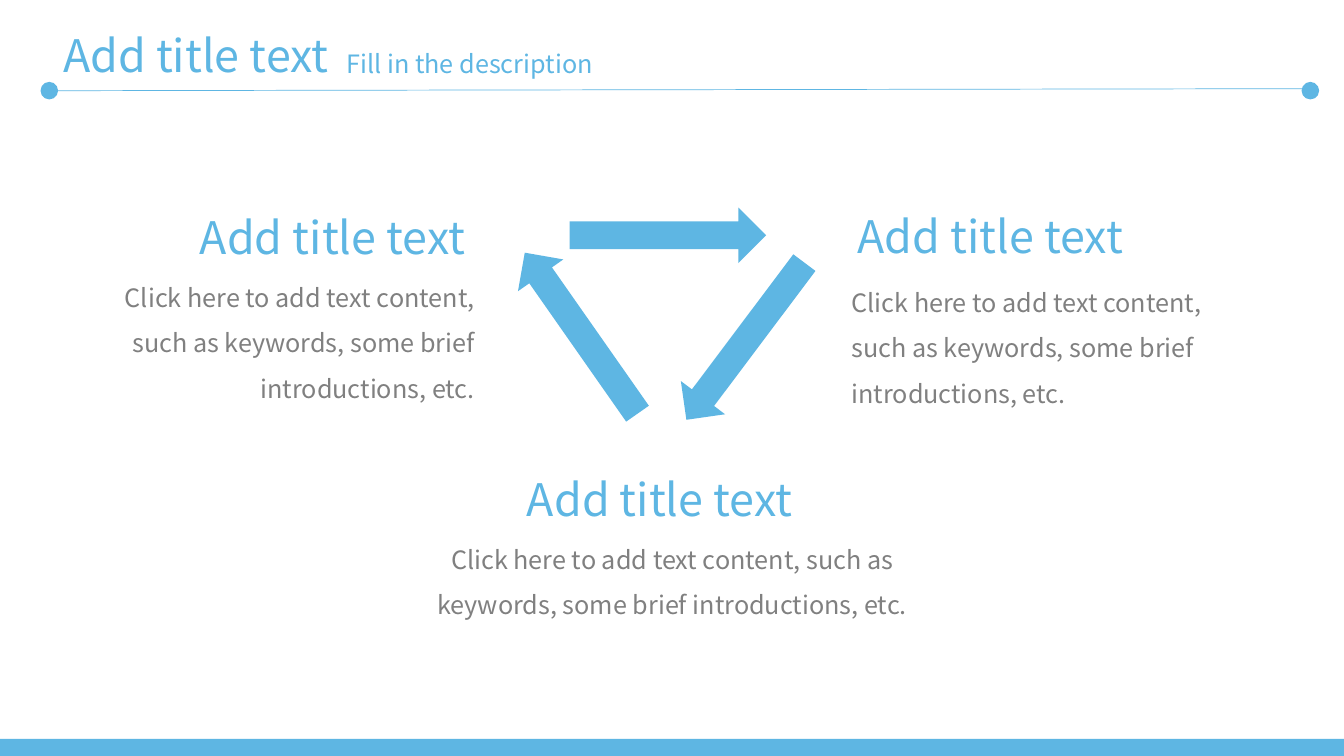
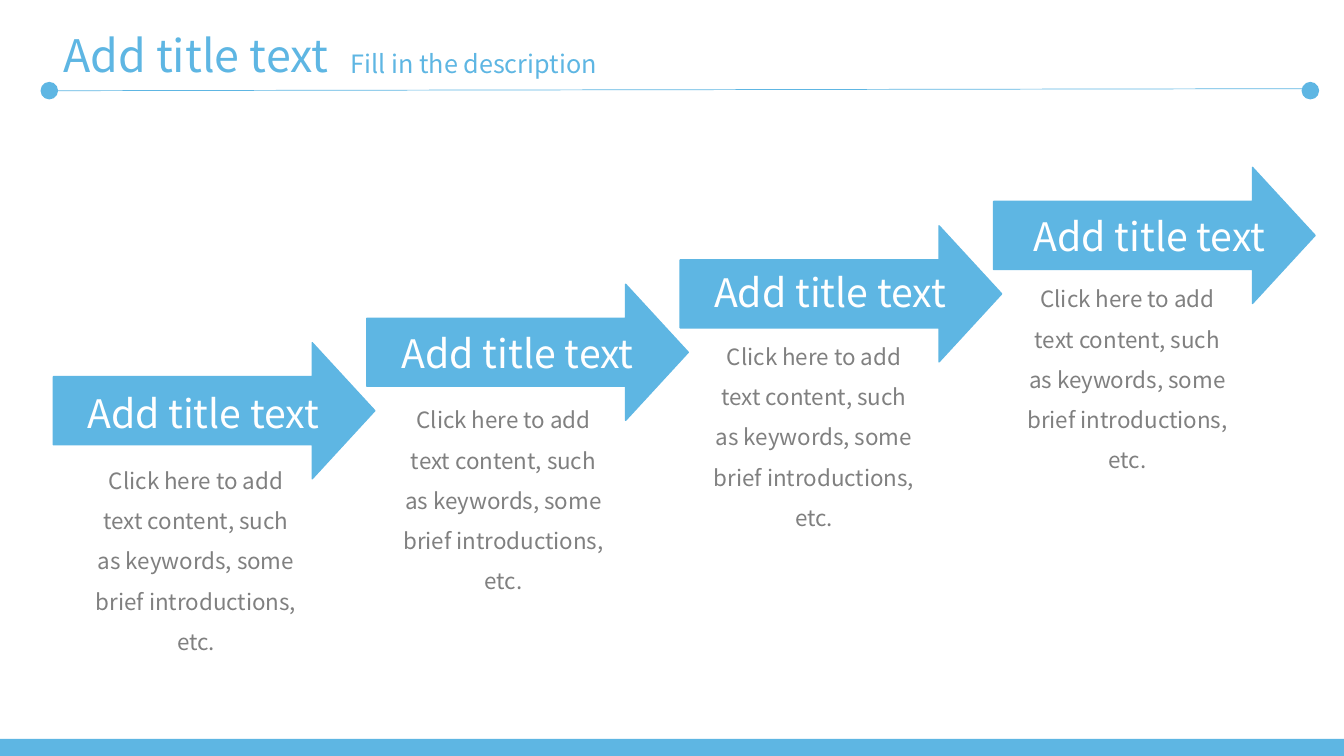
from lxml.etree import SubElement
from pptx import Presentation
from pptx.dml.color import RGBColor
from pptx.enum.shapes import MSO_CONNECTOR as Connector, MSO_SHAPE as Shape
from pptx.enum.text import MSO_AUTO_SIZE as AutoSize, PP_ALIGN as Align
from pptx.oxml.ns import qn
from pptx.util import Inches, Pt

WIDTH, HEIGHT = Inches(13.333), Inches(7.5)
FONT = "Noto Sans CJK SC"
BLUE, GRAY, WHITE = "5EB6E3", "808080", "FFFFFF"
TITLE = "Add title text"
DESCRIPTION = "Fill in the description"
CONTENT = "Click here to add text content, such as keywords, some brief introductions, etc."


def color(value):
    return RGBColor.from_string(value)


def across(percent):
    return round(WIDTH * percent / 100)


def down(percent):
    return round(HEIGHT * percent / 100)


def area(left, top, width, height):
    return across(left), down(top), across(width), down(height)


def apply(target, values):
    for name, value in values.items():
        setattr(target, name, value)


def add_text(page, frame, text, size, shade, align=Align.LEFT, spacing=1.0):
    box = page.shapes.add_textbox(*area(*frame))
    apply(box.text_frame, {"word_wrap": True, "auto_size": AutoSize.SHAPE_TO_FIT_TEXT})
    para = box.text_frame.paragraphs[0]
    apply(para, {"alignment": align, "line_spacing": spacing})
    span = para.add_run()
    span.text = text
    apply(span.font, {"name": FONT, "size": Pt(size)})
    span.font.color.rgb = color(shade)


def add_solid(page, kind, frame, outlined=False, rotation=0):
    solid = page.shapes.add_shape(kind, *area(*frame))
    solid.shadow.inherit = False
    solid.rotation = rotation
    solid.fill.solid()
    solid.fill.fore_color.rgb = color(BLUE)
    if outlined:
        solid.line.color.rgb = color(BLUE)
        solid.line.width = Pt(1)
    else:
        solid.line.fill.background()
    return solid


def add_rule(page, start, end):
    rule = page.shapes.add_connector(
        Connector.STRAIGHT, across(start[0]), down(start[1]), across(end[0]), down(end[1])
    )
    rule.line.color.rgb = color(BLUE)
    rule.line.width = Pt(0.5)
    SubElement(rule._element.spPr, qn("a:effectLst"))


def add_page(deck, description_left):
    page = deck.slides.add_slide(deck.slide_layouts[6])
    add_solid(page, Shape.RECTANGLE, (0, 97.73, 100, 2.27))
    add_rule(page, (98.1, 11.73), (3.97, 12))
    for left in (3.07, 96.9):
        add_solid(page, Shape.OVAL, (left, 10.93, 1.2, 2.13), outlined=True)
    add_text(page, (3.97, 3.07, 22.88, 8.53), TITLE, 32, BLUE)
    add_text(page, (description_left, 5.73, 22.88, 5.33), DESCRIPTION, 18, BLUE)
    return page


def build_cycle(deck):
    page = add_page(deck, 25.05)
    topics = [
        ((13.43, 27.07, 22.65, 8.53), (5.62, 34.67, 30.45, 18.8), Align.RIGHT),
        ((61.88, 26.93, 23.62, 8.53), (62.62, 35.33, 31.65, 19.47), Align.LEFT),
        ((36.98, 61.73, 24.22, 8.53), (30.3, 69.33, 39.45, 12.8), Align.CENTER),
    ]
    for title_frame, content_frame, align in topics:
        add_text(page, title_frame, TITLE, 32, BLUE, Align.CENTER)
        add_text(page, content_frame, CONTENT, 18, GRAY, align, 1.5)

    width, height = 4.12, 26
    for center, middle, rotation in [(49.69, 31.13, 90), (55.46, 45.13, 216.9), (43.24, 44.07, 325)]:
        frame = (center - width / 2, middle - height / 2, width, height)
        add_solid(page, Shape.UP_ARROW, frame, rotation=rotation)


def build_steps(deck):
    page = add_page(deck, 25.35)
    steps = [
        ((3.38, 50.8), (6, 59.33)),
        ((26.78, 42.93), (28.88, 51.33)),
        ((50.02, 34.8), (51.98, 42.93)),
        ((73.8, 27.47), (75.3, 35.33)),
    ]
    for index, (title_corner, content_corner) in enumerate(steps):
        frame = (3.97 + 23.32 * index, 45.33 - 7.73 * index, 23.92, 18)
        arrow = add_solid(page, Shape.RIGHT_ARROW, frame, outlined=True)
        arrow.adjustments[1] = 0.46
        add_text(page, (*content_corner, 17.18, 27.6), CONTENT, 16, GRAY, Align.CENTER, 1.5)
        add_text(page, (*title_corner, 23.48, 7.6), TITLE, 28, WHITE, Align.CENTER)


def main():
    deck = Presentation()
    apply(deck, {"slide_width": WIDTH, "slide_height": HEIGHT})
    build_cycle(deck)
    build_steps(deck)
    deck.save("out.pptx")


if __name__ == "__main__":
    main()
